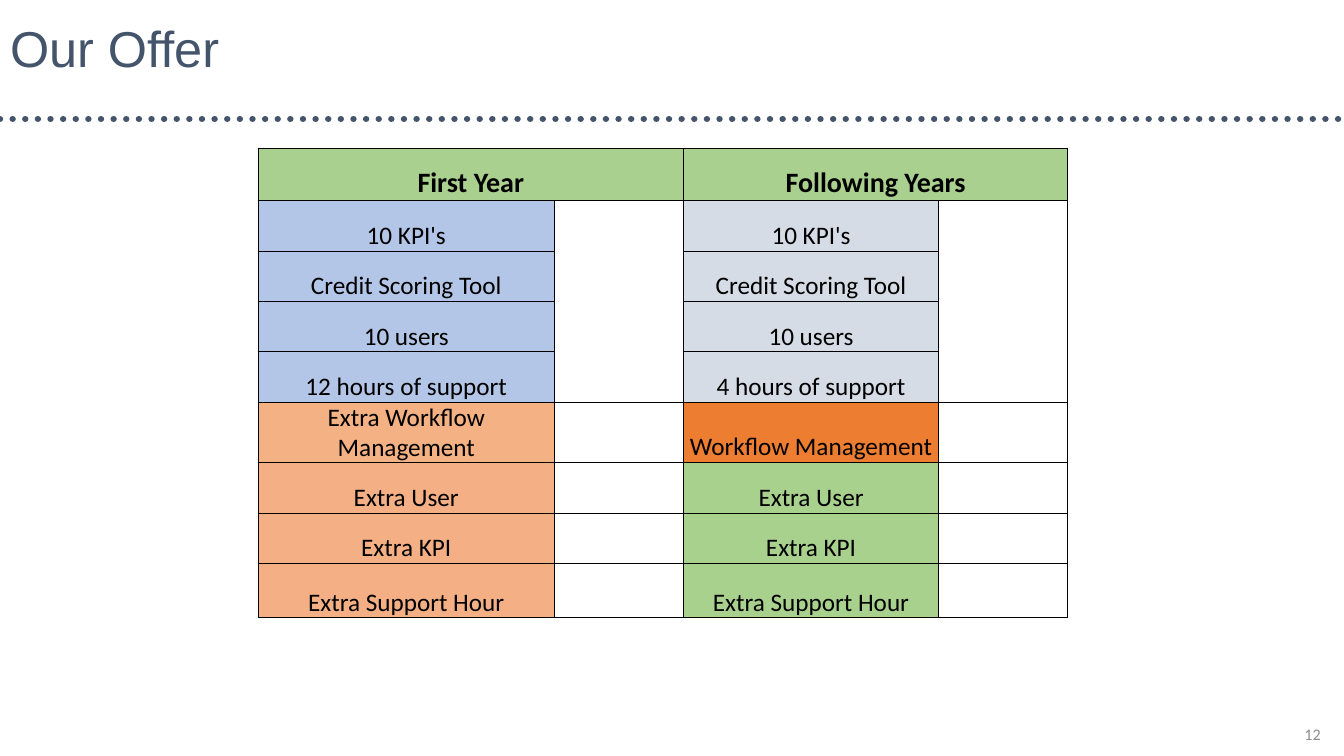
from lxml import etree
from pptx import Presentation
from pptx.dml.color import RGBColor
from pptx.enum.dml import MSO_LINE
from pptx.enum.shapes import MSO_CONNECTOR
from pptx.enum.text import MSO_ANCHOR, PP_ALIGN
from pptx.oxml.ns import qn
from pptx.util import Inches, Pt

DOTS = MSO_LINE.ROUND_DOT
LINE = MSO_CONNECTOR.STRAIGHT
MIDDLE, BOTTOM = MSO_ANCHOR.MIDDLE, MSO_ANCHOR.BOTTOM
LEFT, CENTER, RIGHT = PP_ALIGN.LEFT, PP_ALIGN.CENTER, PP_ALIGN.RIGHT

BLACK = RGBColor(0x00, 0x00, 0x00)
SLATE = RGBColor(0x44, 0x54, 0x6A)
GRAY = RGBColor(0x8E, 0x8E, 0x8E)
WHITE = RGBColor(0xFF, 0xFF, 0xFF)
HEAD = RGBColor(0xA9, 0xD0, 0x8E)
BLUE = RGBColor(0xB4, 0xC6, 0xE7)
SILVER = RGBColor(0xD6, 0xDC, 0xE5)
PEACH = RGBColor(0xF4, 0xB1, 0x83)
SALMON = RGBColor(0xF4, 0xB0, 0x84)
ORANGE = RGBColor(0xED, 0x7D, 0x31)
GREEN = RGBColor(0xA9, 0xD1, 0x8E)

WIDE, HIGH = 13.33, 7.5
TITLE = "Our Offer"
NUMBER = "12"
RULE = 1.18
ROWS = [
    ("First Year", HEAD, "Following Years", HEAD),
    ("10 KPI's", BLUE, "10 KPI's", SILVER),
    ("Credit Scoring Tool", BLUE, "Credit Scoring Tool", SILVER),
    ("10 users", BLUE, "10 users", SILVER),
    ("12 hours of support", BLUE, "4 hours of support", SILVER),
    ("Extra Workflow Management", PEACH, "Workflow Management", ORANGE),
    ("Extra User", SALMON, "Extra User", GREEN),
    ("Extra KPI", SALMON, "Extra KPI", GREEN),
    ("Extra Support Hour", SALMON, "Extra Support Hour", GREEN),
]
WIDTHS = [2.94, 1.28, 2.53, 1.28]
HEIGHTS = [0.52] + [0.5] * 7 + [0.54]
SPANS = [(0, 0, 0, 1), (0, 2, 0, 3), (1, 1, 4, 1), (1, 3, 4, 3)]
PLACE = 2.56, 1.47

BIG = dict(name="Arial", size=Pt(36))
SMALL = dict(name="Calibri", size=Pt(11.5))
TOP = dict(name="Calibri", size=Pt(20), bold=True)
BODY = dict(name="Calibri", size=Pt(18), bold=False)


def style(para, text, look, color, align):
    run = para.add_run()
    run.text = text
    para.alignment = align
    for key, value in look.items():
        setattr(run.font, key, value)
    run.font.color.rgb = color


def label(slide, text, area, look, color, align, inset):
    frame = slide.shapes.add_textbox(*map(Inches, area)).text_frame
    frame.word_wrap = True
    frame.vertical_anchor = MIDDLE
    for side, gap in zip(("left", "top", "right", "bottom"), inset * 2):
        setattr(frame, "margin_" + side, Inches(gap))
    para = frame.paragraphs[0]
    style(para, text, look, color, align)
    return para


def border(cell, row, col):
    props = cell._tc.get_or_add_tcPr()
    outer = {"L": col == 0, "R": col == len(WIDTHS) - 1,
             "T": row == 0, "B": row == len(ROWS) - 1}
    for side, edge in outer.items():
        line = etree.SubElement(props, qn("a:ln" + side), w=str(Pt(1 if edge else 0.5)))
        fill = etree.SubElement(line, qn("a:solidFill"))
        etree.SubElement(fill, qn("a:srgbClr"), val=str(BLACK))


def draw_rule(slide):
    rule = slide.shapes.add_connector(LINE, 0, Inches(RULE), Inches(WIDE), Inches(RULE))
    rule.line.color.rgb = SLATE
    rule.line.width = Pt(4.5)
    rule.line.dash_style = DOTS
    props = rule._element.spPr
    props.find(qn("a:ln")).set("cap", "rnd")
    etree.SubElement(props, qn("a:effectLst"))


def draw_table(slide):
    area = PLACE + (sum(WIDTHS), sum(HEIGHTS))
    table = slide.shapes.add_table(len(ROWS), len(WIDTHS), *map(Inches, area)).table
    table.first_row = table.horz_banding = False
    for col, width in zip(table.columns, WIDTHS):
        col.width = Inches(width)
    for row, height in zip(table.rows, HEIGHTS):
        row.height = Inches(height)
    for r, (first, tint, later, shade) in enumerate(ROWS):
        blank = WHITE if tint == PEACH else None
        for c, (text, fill) in enumerate([(first, tint), ("", blank), (later, shade), ("", blank)]):
            cell = table.cell(r, c)
            border(cell, r, c)
            if fill is None:
                cell.fill.background()
            else:
                cell.fill.solid()
                cell.fill.fore_color.rgb = fill
            cell.vertical_anchor = BOTTOM
            for side in ("left", "top", "right", "bottom"):
                setattr(cell, "margin_" + side, 0)
            if text:
                style(cell.text_frame.paragraphs[0], text, BODY if r else TOP, BLACK, CENTER)
    for r, c, last, end in SPANS:
        table.cell(r, c).merge(table.cell(last, end))


def main():
    deck = Presentation()
    deck.slide_width, deck.slide_height = Inches(WIDE), Inches(HIGH)
    slide = deck.slides.add_slide(deck.slide_layouts[6])
    draw_rule(slide)
    title = label(slide, TITLE, (0.1, 0.08, 11.73, 0.85), BIG, SLATE, LEFT, (0, 0))
    title.line_spacing = 0.9
    label(slide, NUMBER, (12.48, 7.14, 0.73, 0.28), SMALL, GRAY, RIGHT, (0.11, 0.05))
    draw_table(slide)
    deck.save("out.pptx")


if __name__ == "__main__":
    main()
